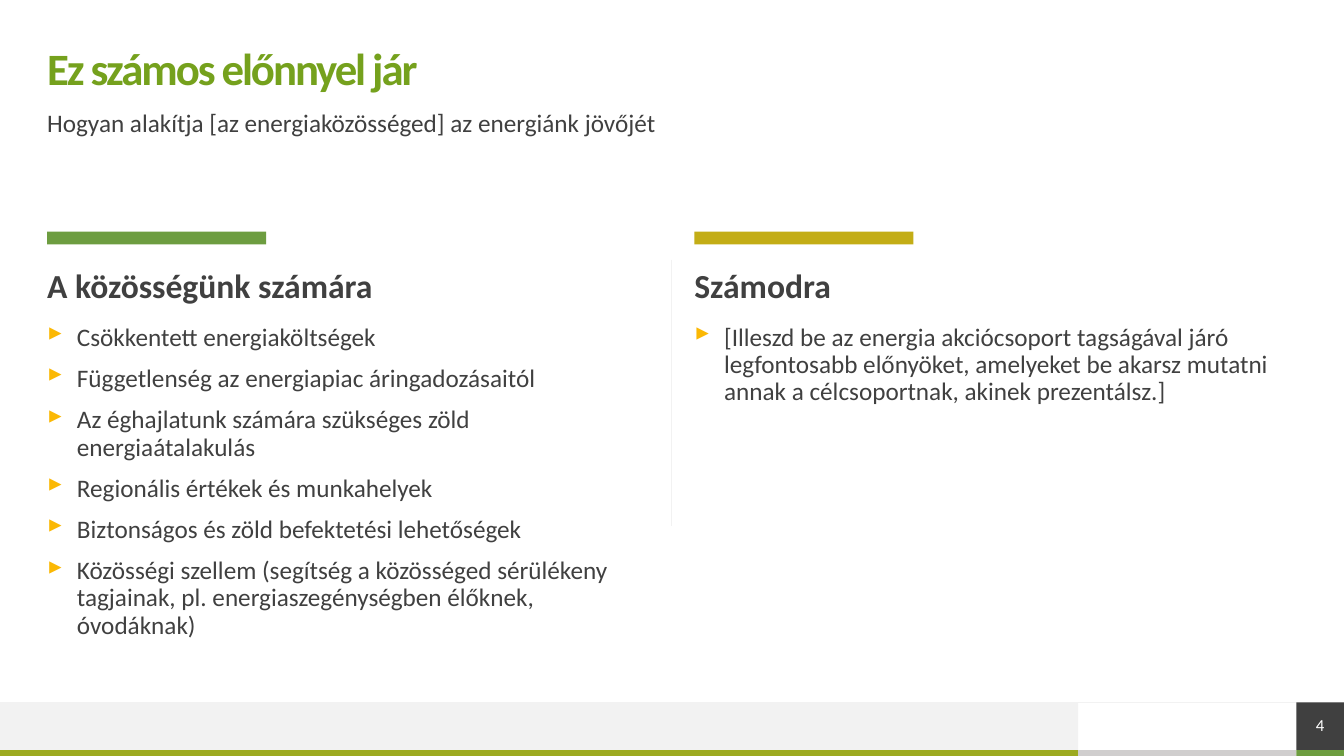
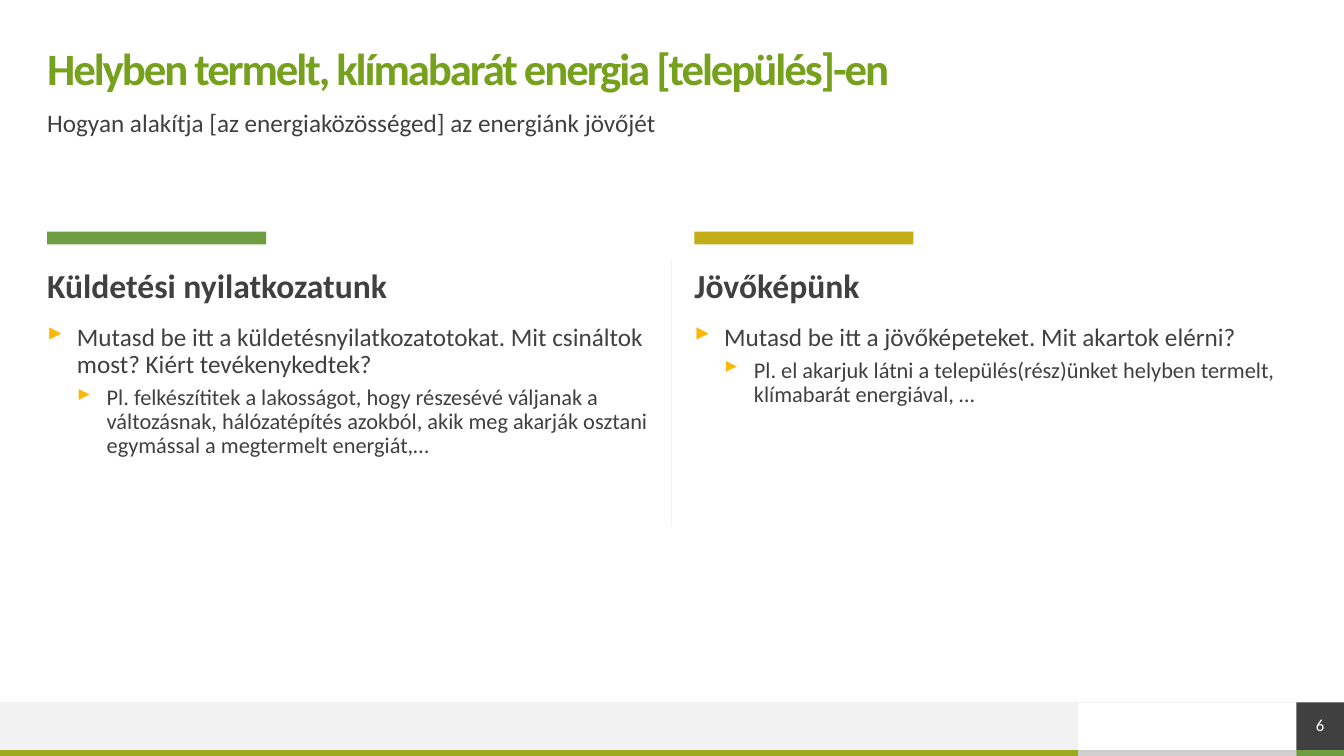
from dataclasses import dataclass

from lxml import etree
from pptx import Presentation
from pptx import util as u
from pptx.dml.color import RGBColor
from pptx.enum import shapes, text
from pptx.oxml.ns import qn


@dataclass(frozen=True)
class Theme:
    font: str = "Calibri"
    title: str = "75A11D"
    body: str = "404040"
    white: str = "FFFFFF"
    bullet: str = "FBB804"
    green: str = "6D9D40"
    gold: str = "C3AD16"
    lime: str = "9CAA20"
    silver: str = "D0CECE"
    pale: str = "F2F2F2"
    title_size: int = 32
    heading_size: int = 24
    text_sizes: tuple = (18, 16)
    number_size: int = 12


theme = Theme()

# Grid, in centimetres
WIDTH, HEIGHT = 33.87, 19.05
MARGIN = 1.19
COLUMN_LEFTS = (MARGIN, 17.5)
COLUMN_WIDTH = 15.19
ACCENT_WIDTH = 5.52
FOOTER_TOP, STRIP_TOP = 17.7, 18.9
LOGO_LEFT, NUMBER_LEFT = 27.17, 32.67

SUBTITLE = "Hogyan alakítja [az energiaközösséged] az energiánk jövőjét"

# Each column: heading, body height, list of (level, text)
SLIDES = [
    ("Ez számos előnnyel jár", 4, [
        ("A közösségünk számára", 8.08, [
            (0, "Csökkentett energiaköltségek"),
            (0, "Függetlenség az energiapiac áringadozásaitól"),
            (0, "Az éghajlatunk számára szükséges zöld energiaátalakulás"),
            (0, "Regionális értékek és munkahelyek"),
            (0, "Biztonságos és zöld befektetési lehetőségek"),
            (0, "Közösségi szellem (segítség a közösséged sérülékeny tagjainak, "
                "pl. energiaszegénységben élőknek, óvodáknak)"),
        ]),
        ("Számodra", 6.1, [
            (0, "[Illeszd be az energia akciócsoport tagságával járó legfontosabb "
                "előnyöket, amelyeket be akarsz mutatni annak a célcsoportnak, "
                "akinek prezentálsz.]"),
        ]),
    ]),
    ("Helyben termelt, klímabarát energia [település]-en", 6, [
        ("Küldetési nyilatkozatunk", 6.1, [
            (0, "Mutasd be itt a küldetésnyilatkozatotokat. Mit csináltok most? "
                "Kiért tevékenykedtek?"),
            (1, "Pl. felkészítitek a lakosságot, hogy részesévé váljanak a "
                "változásnak, hálózatépítés azokból, akik meg akarják osztani "
                "egymással a megtermelt energiát,…"),
        ]),
        ("Jövőképünk", 6.1, [
            (0, "Mutasd be itt a jövőképeteket. Mit akartok elérni?"),
            (1, "Pl. el akarjuk látni a település(rész)ünket helyben termelt, "
                "klímabarát energiával, …"),
        ]),
    ]),
]


def add_box(slide, left, top, width, height, fill=None):
    """Add a filled rectangle, or a text box when there is no fill."""
    area = [u.Cm(value) for value in (left, top, width, height)]
    if fill:
        shape = slide.shapes.add_shape(shapes.MSO_SHAPE.RECTANGLE, *area)
        shape.shadow.inherit = False
        shape.fill.solid()
        shape.fill.fore_color.rgb = RGBColor.from_string(fill)
        shape.line.fill.background()
    else:
        shape = slide.shapes.add_textbox(*area)
    frame = shape.text_frame
    frame.word_wrap = True
    frame.margin_left = frame.margin_right = 0
    frame.margin_top = frame.margin_bottom = 0
    return shape


def write(paragraph, content, size, color=theme.body, bold=False):
    """Fill one paragraph in the shared text style."""
    paragraph.text = content
    paragraph.line_spacing = 0.9
    font = paragraph.font
    font.name = theme.font
    font.size = u.Pt(size)
    font.bold = bold
    font.color.rgb = RGBColor.from_string(color)


presentation = Presentation()
presentation.slide_width = u.Cm(WIDTH)
presentation.slide_height = u.Cm(HEIGHT)

for title, number, columns in SLIDES:
    slide = presentation.slides.add_slide(presentation.slide_layouts[6])

    # Footer band and coloured strip
    strip_height = HEIGHT - STRIP_TOP
    footer_height = STRIP_TOP - FOOTER_TOP
    add_box(slide, 0, FOOTER_TOP, LOGO_LEFT, footer_height, theme.pale)
    strip_edges = (0, LOGO_LEFT, NUMBER_LEFT, WIDTH)
    strip_colors = (theme.lime, theme.silver, theme.green)
    for left, right, color in zip(strip_edges, strip_edges[1:], strip_colors):
        add_box(slide, left, STRIP_TOP, right - left, strip_height, color)

    # Footer rule and column divider
    for ends in ((WIDTH, FOOTER_TOP, 0, FOOTER_TOP), (16.93, 6.55, 16.93, 13.26)):
        rule = slide.shapes.add_connector(
            shapes.MSO_CONNECTOR.STRAIGHT, *[u.Cm(value) for value in ends])
        rule.line.color.rgb = RGBColor.from_string(theme.pale)
        rule.line.width = u.Pt(0.5)
        etree.SubElement(rule._element.spPr, qn("a:effectLst"))

    # Title and subtitle
    frame = add_box(slide, MARGIN, 1.19, 31.5, 1.19).text_frame
    frame.vertical_anchor = text.MSO_ANCHOR.MIDDLE
    paragraph = frame.paragraphs[0]
    write(paragraph, title, theme.title_size, theme.title, bold=True)
    paragraph.runs[0]._r.get_or_add_rPr().set("spc", "-150")
    frame = add_box(slide, MARGIN, 2.79, 31.5, 1).text_frame
    write(frame.paragraphs[0], SUBTITLE, theme.text_sizes[0])

    # Two columns: accent, heading, bullets
    accents = (theme.green, theme.gold)
    for left, accent, (heading, height, items) in zip(COLUMN_LEFTS, accents, columns):
        add_box(slide, left, 5.84, ACCENT_WIDTH, 0.32, accent)
        frame = add_box(slide, left, 6.78, COLUMN_WIDTH, 1).text_frame
        write(frame.paragraphs[0], heading, theme.heading_size, bold=True)

        frame = add_box(slide, left, 8.18, COLUMN_WIDTH, height).text_frame
        for index, (level, content) in enumerate(items):
            paragraph = frame.add_paragraph() if index else frame.paragraphs[0]
            paragraph.level = level
            if index:
                paragraph.space_before = u.Pt((10, 5)[level])
            properties = paragraph._p.get_or_add_pPr()
            properties.set("marL", str(u.Cm(0.75 * (level + 1))))
            properties.set("indent", str(u.Cm(-0.75)))
            bullet_color = etree.SubElement(properties, qn("a:buClr"))
            etree.SubElement(bullet_color, qn("a:srgbClr"), val=theme.bullet)
            etree.SubElement(properties, qn("a:buChar"), char="▸")
            write(paragraph, content, theme.text_sizes[level])

    # Slide number
    number_box = add_box(slide, NUMBER_LEFT, FOOTER_TOP, WIDTH - NUMBER_LEFT,
                         footer_height, theme.body)
    number_box.text_frame.vertical_anchor = text.MSO_ANCHOR.MIDDLE
    paragraph = number_box.text_frame.paragraphs[0]
    write(paragraph, str(number), theme.number_size, theme.white)
    paragraph.alignment = text.PP_ALIGN.CENTER

presentation.save("out.pptx")
